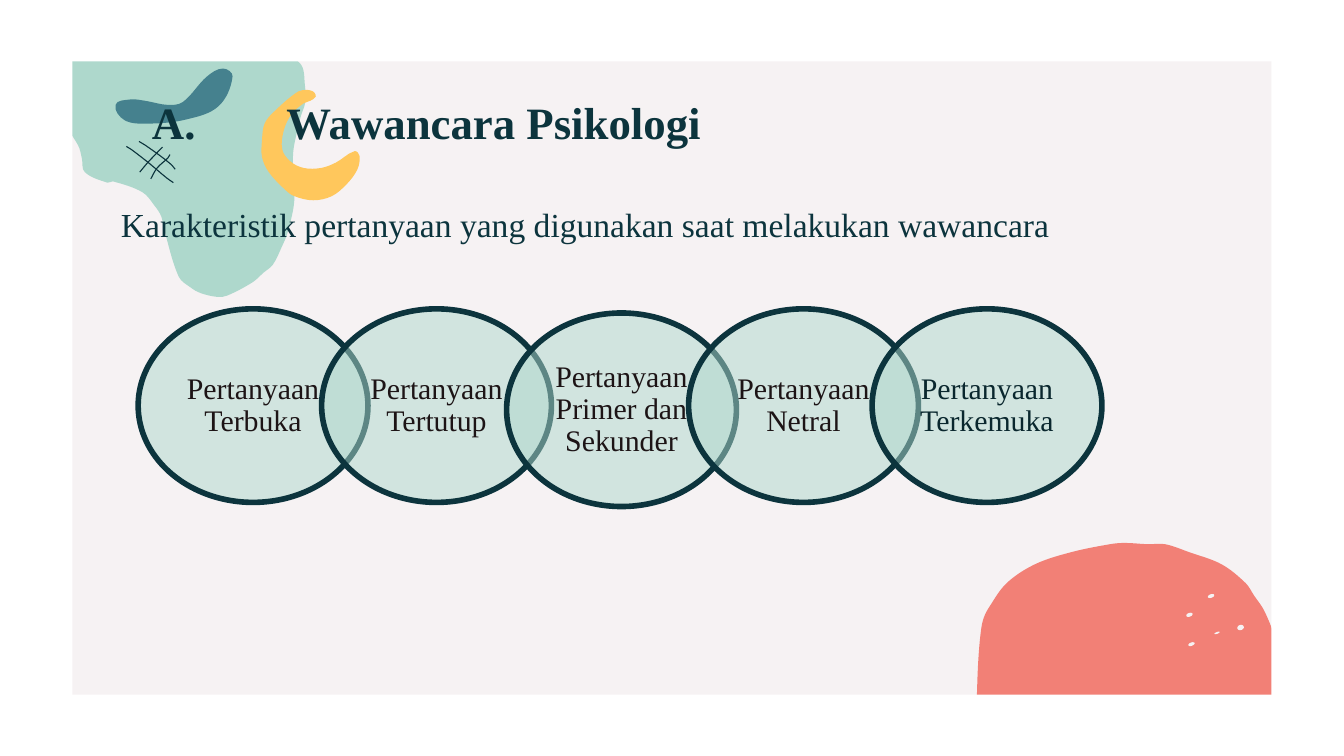
import dataclasses
import itertools
import math
import typing

import lxml.etree
import pptx
import pptx.dml.color
import pptx.enum.shapes
import pptx.enum.text
import pptx.oxml.ns
import pptx.util

Pt = pptx.util.Pt
qn = pptx.oxml.ns.qn
Point = tuple[float, float]


@dataclasses.dataclass(frozen=True)
class Theme:
    font: str = "Times New Roman"
    paper: str = "F6F2F3"
    frame: str = "FFFFFF"
    ink: str = "0C343D"
    label: str = "1D1416"
    last_label: str = "0A272E"
    mint: str = "AED8CC"
    teal: str = "45818E"
    yellow: str = "FFC75C"
    coral: str = "F28076"
    title_size: float = 24
    body_size: float = 18
    label_size: float = 16
    ring_width: float = 3
    scribble_width: float = 0.6


class Blob(typing.NamedTuple):
    color: str
    outline: list[Point]


class Circle(typing.NamedTuple):
    text: str
    color: str
    shift: float = 0
    drop: float = 0


class Box(typing.NamedTuple):
    left: float
    top: float
    width: float
    height: float


THEME = Theme()
SLIDE_WIDTH, SLIDE_HEIGHT = 720, 405
FRAME_SIDE, FRAME_END = 38.9, 32.9

BLOBS = [
    Blob(THEME.coral, [
        (602.6, 290.9), (594.7, 291.6), (573.8, 295.9), (554.4, 302.4), (539.3, 312.5),
        (529.9, 325.4), (527, 331.2), (525.6, 337.7), (524.2, 352.8), (523.4, 372),
        (523.4, 376), (680, 376), (684, 357), (683.3, 343.4), (677.5, 327.6), (671.8, 319),
        (667.4, 312.5), (654.5, 302.4), (637.2, 295.9), (624.2, 291.6), (614.9, 291.6)]),
    Blob(THEME.mint, [
        (124.6, 15.1), (109.4, 17.3), (100.8, 20.2), (95.8, 23.8), (85, 29.5), (78.5, 31),
        (67, 27.4), (55.4, 24.5), (47.5, 23), (25.9, 33.1), (25.2, 51.1), (41.8, 77.8),
        (43.9, 85), (45.4, 92.2), (57.6, 97.9), (60.5, 97.2), (76.3, 103), (82.8, 110.2),
        (86.4, 115.9), (87.8, 122.4), (95.8, 148.3), (102.2, 154.1), (107.3, 157),
        (116.6, 159.1), (121.7, 158.4), (135.4, 151.2), (141.1, 146.2), (146.2, 141.8),
        (151.2, 131.8), (154.1, 124.6), (157.7, 107.3), (157, 82.8), (159.8, 67.7),
        (161.3, 61.9), (163.4, 55.4), (163.4, 46.1), (160.6, 33.8), (135.4, 17.3)]),
    Blob(THEME.teal, [
        (119.5, 36.7), (110.9, 41), (97.9, 54.7), (90, 56.2), (77.8, 54), (69.8, 53.3),
        (61.9, 56.2), (66.8, 64.4), (79.2, 66.2), (99.4, 64.1), (117.1, 56.9), (124.6, 41)]),
    Blob(THEME.yellow, [
        (167.8, 49), (164.9, 48.2), (159.8, 49), (146.9, 59.8), (141.8, 66.2),
        (140.4, 74.9), (140.4, 84.2), (144, 92.2), (152.6, 101.5), (157.7, 105.1),
        (167.8, 107.3), (177.8, 105.1), (185.8, 98.6), (191.5, 90.7), (192.6, 83.5),
        (190, 81), (180, 87.1), (172.1, 90), (162.7, 90), (155.5, 86.4),
        (151.2, 79.9), (152.1, 69.8), (156.2, 61.2), (162.7, 55.4), (166.3, 54),
        (169.2, 51.8), (168.5, 49.7)]),
]
SCRIBBLES = [
    [(67.7, 78.5), (70.6, 80.3), (79.9, 87.5), (89.3, 95.4), (92.9, 97.9)],
    [(74.5, 75.8), (77.8, 77.8), (86.4, 83.9), (92.2, 88.6), (93.9, 90.7)],
    [(87.1, 78.8), (84.6, 81.4), (79.2, 87.1), (74.9, 92.2)],
    [(91.1, 82.8), (90, 84.6), (84.2, 90), (80.8, 95.8)],
]
SPECKS = [
    Box(636.5, 344.2, 3.6, 1.8), Box(635.4, 328.4, 3.6, 2), Box(650.5, 338.6, 3, 1),
    Box(647, 318.4, 3.6, 1.9), Box(662.8, 334.8, 3.6, 2.8),
]
FRAME = [
    Box(0, 0, SLIDE_WIDTH, FRAME_END),
    Box(0, 0, FRAME_SIDE, SLIDE_HEIGHT),
    Box(0, SLIDE_HEIGHT - FRAME_END, SLIDE_WIDTH, FRAME_END),
    Box(SLIDE_WIDTH - FRAME_SIDE, 0, FRAME_SIDE, SLIDE_HEIGHT),
]
CIRCLES = [
    Circle("Pertanyaan Terbuka", THEME.label),
    Circle("Pertanyaan Tertutup", THEME.label),
    Circle("Pertanyaan Primer dan Sekunder", THEME.label, shift=0.8, drop=2.2),
    Circle("Pertanyaan Netral", THEME.label),
    Circle("Pertanyaan Terkemuka", THEME.last_label),
]
FIRST_CIRCLE = Box(74, 165.5, 123.1, 103.7)
CIRCLE_STEP = 98.3


def rgb(color: str) -> pptx.dml.color.RGBColor:
    return pptx.dml.color.RGBColor.from_string(color)


def curve_handles(points: list[Point], closed: bool) -> list[tuple[Point, Point]]:
    """Give each segment two Bezier handles, each a third of its chord long."""
    count = len(points)

    def neighbour(index: int) -> Point:
        return points[index % count if closed else min(max(index, 0), count - 1)]

    def offset(index: int, length: float) -> Point:
        (x0, y0), (x, y), (x1, y1) = map(neighbour, (index - 1, index, index + 1))
        scale = length / math.hypot(x1 - x0, y1 - y0)
        return x + (x1 - x0) * scale, y + (y1 - y0) * scale

    handles = []
    for index in range(count if closed else count - 1):
        reach = math.dist(neighbour(index), neighbour(index + 1)) / 3
        handles.append((offset(index, reach), offset(index + 1, -reach)))
    return handles


def add_curve(slide, points: list[Point], closed: bool):
    """Build a freeform through the points and bend its segments into Bezier curves."""
    vertices = [(Pt(x), Pt(y)) for x, y in points]
    ends = vertices[1:] + vertices[:1] if closed else vertices[1:]
    builder = slide.shapes.build_freeform(*vertices[0], scale=1.0)
    builder.add_line_segments(ends, close=closed)
    shape = builder.convert_to_shape()
    shape.shadow.inherit = False
    segments = list(shape.element.iter(qn("a:lnTo")))
    for segment, handles in zip(segments, curve_handles(points, closed)):
        segment.tag = qn("a:cubicBezTo")
        for position, (x, y) in enumerate(handles):
            handle = lxml.etree.Element(
                qn("a:pt"), x=str(Pt(x) - shape.left), y=str(Pt(y) - shape.top))
            segment.insert(position, handle)
    return shape


def paint(shape, color: str) -> None:
    shape.shadow.inherit = False
    shape.fill.solid()
    shape.fill.fore_color.rgb = rgb(color)
    shape.line.fill.background()


def add_preset(slide, kind, box: Box, color: str):
    shape = slide.shapes.add_shape(kind, *map(Pt, box))
    paint(shape, color)
    return shape


def write(paragraph, text: str, size: float, color: str, bold: bool = False) -> None:
    run = paragraph.add_run()
    run.text = text
    run.font.name = THEME.font
    run.font.size = Pt(size)
    run.font.bold = bold
    run.font.color.rgb = rgb(color)


def set_frame(shape, anchor, side: float, end: float):
    frame = shape.text_frame
    frame.word_wrap = True
    frame.auto_size = pptx.enum.text.MSO_AUTO_SIZE.NONE
    frame.vertical_anchor = anchor
    frame.margin_left = frame.margin_right = Pt(side)
    frame.margin_top = frame.margin_bottom = Pt(end)
    return frame.paragraphs[0]


def place_placeholder(shape, box: Box, anchor):
    """Move a placeholder above everything drawn so far and return its paragraph."""
    shape.left, shape.top, shape.width, shape.height = map(Pt, box)
    shape.element.getparent().append(shape.element)
    paragraph = set_frame(shape, anchor, 7.2, 7.2)
    paragraph.alignment = pptx.enum.text.PP_ALIGN.LEFT
    paragraph.space_before = Pt(0)
    return paragraph


def add_circle(slide, circle: Circle, box: Box) -> None:
    shape = add_preset(slide, pptx.enum.shapes.MSO_SHAPE.OVAL, box, THEME.mint)
    tint = shape.element.spPr.find(qn("a:solidFill")).find(qn("a:srgbClr"))
    lxml.etree.SubElement(tint, qn("a:alpha"), val="50000")
    shape.line.color.rgb = rgb(THEME.ink)
    shape.line.width = Pt(THEME.ring_width)
    paragraph = set_frame(shape, pptx.enum.text.MSO_ANCHOR.MIDDLE, 6.5, 1.5)
    paragraph.alignment = pptx.enum.text.PP_ALIGN.CENTER
    paragraph.line_spacing = 0.9
    write(paragraph, circle.text, THEME.label_size, circle.color)


def add_decoration(slide) -> None:
    for blob in BLOBS:
        paint(add_curve(slide, blob.outline, closed=True), blob.color)
    for stroke in SCRIBBLES:
        shape = add_curve(slide, stroke, closed=False)
        shape.fill.background()
        shape.line.color.rgb = rgb(THEME.ink)
        shape.line.width = Pt(THEME.scribble_width)
    for speck in SPECKS:
        add_preset(slide, pptx.enum.shapes.MSO_SHAPE.OVAL, speck, THEME.paper).rotation = -20
    for band in FRAME:
        add_preset(slide, pptx.enum.shapes.MSO_SHAPE.RECTANGLE, band, THEME.frame)


def add_headings(slide) -> None:
    body = place_placeholder(
        slide.placeholders[1], Box(57.6, 102.2, 604, 247.7), pptx.enum.text.MSO_ANCHOR.TOP)
    properties = body._p.get_or_add_pPr()
    properties.set("marL", "0")
    properties.set("indent", "0")
    lxml.etree.SubElement(properties, qn("a:buNone"))
    write(body, "Karakteristik pertanyaan yang digunakan saat melakukan wawancara",
          THEME.body_size, THEME.ink)

    title = place_placeholder(
        slide.shapes.title, Box(74.2, 43.4, 572.4, 43.2), pptx.enum.text.MSO_ANCHOR.BOTTOM)
    tabs = lxml.etree.SubElement(title._p.get_or_add_pPr(), qn("a:tabLst"))
    lxml.etree.SubElement(tabs, qn("a:tab"), pos=str(int(Pt(72))), algn="l")
    write(title, "A.\tWawancara Psikologi", THEME.title_size, THEME.ink, bold=True)


def main() -> None:
    presentation = pptx.Presentation()
    presentation.slide_width, presentation.slide_height = Pt(SLIDE_WIDTH), Pt(SLIDE_HEIGHT)
    slide = presentation.slides.add_slide(presentation.slide_layouts[1])
    slide.background.fill.solid()
    slide.background.fill.fore_color.rgb = rgb(THEME.paper)
    add_decoration(slide)
    add_headings(slide)
    for circle, left in zip(CIRCLES, itertools.count(FIRST_CIRCLE.left, CIRCLE_STEP)):
        add_circle(slide, circle, FIRST_CIRCLE._replace(
            left=left + circle.shift, top=FIRST_CIRCLE.top + circle.drop))
    presentation.save("out.pptx")


if __name__ == "__main__":
    main()
